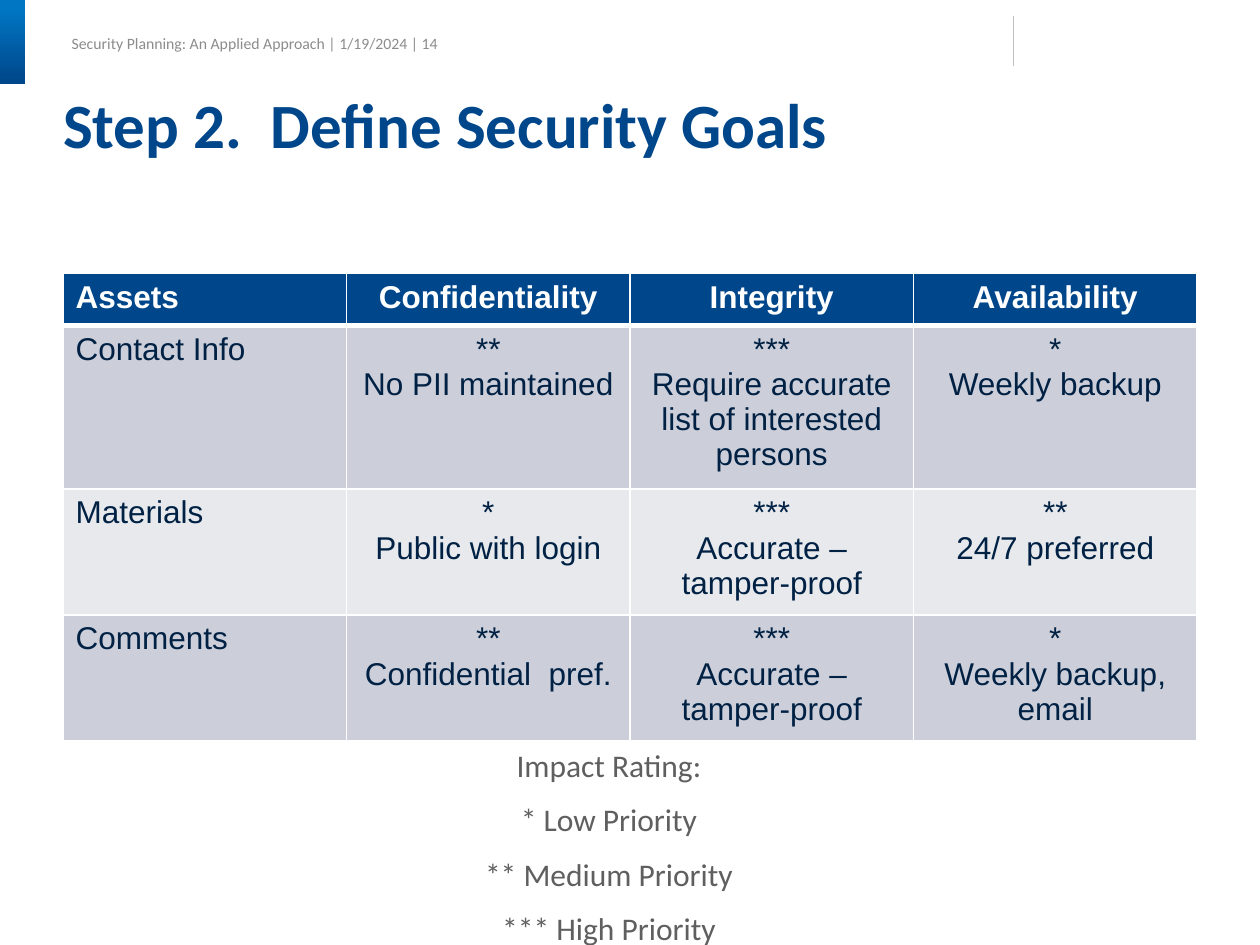
"""Build the security goals slide with its asset table and impact rating key."""
from dataclasses import dataclass

from lxml import etree
from pptx import Presentation
from pptx.dml.color import RGBColor
from pptx.enum.shapes import MSO_CONNECTOR, MSO_SHAPE
from pptx.enum.text import MSO_ANCHOR, MSO_AUTO_SIZE, PP_ALIGN
from pptx.oxml.ns import qn
from pptx.util import Pt

LEFT, CENTER = PP_ALIGN.LEFT, PP_ALIGN.CENTER
TOP, MIDDLE = MSO_ANCHOR.TOP, MSO_ANCHOR.MIDDLE
NO_AUTOFIT = MSO_AUTO_SIZE.NONE
RECTANGLE, STRAIGHT = MSO_SHAPE.RECTANGLE, MSO_CONNECTOR.STRAIGHT
NAVY, SKY, WHITE, INK = "00468A", "0176C3", "FFFFFF", "002143"
BANDS = ("CCCFDA", "E7E9ED")
COLUMN_WIDTH = 162


@dataclass(frozen=True)
class Style:
    size: float
    color: str
    font: str = "Calibri"
    bold: bool = False
    align: PP_ALIGN = LEFT
    line_spacing: object = None
    space_before: float = 0


@dataclass(frozen=True)
class Row:
    height: float
    fill: str
    color: str
    cells: tuple
    bold: bool = False
    top_border: float = 1
    bottom_border: float = 1


ROWS = (
    Row(29.5, NAVY, WHITE,
        (("Assets",), ("Confidentiality",), ("Integrity",), ("Availability",)),
        bold=True, bottom_border=3),
    Row(93.6, BANDS[0], INK,
        (("Contact Info",), ("**", "No PII maintained"),
         ("***", "Require accurate list of interested persons"),
         ("*", "Weekly backup")), top_border=3),
    Row(72, BANDS[1], INK,
        (("Materials",), ("*", "Public with login"),
         ("***", "Accurate –", "tamper-proof"), ("**", "24/7 preferred"))),
    Row(72, BANDS[0], INK,
        (("Comments",), ("**", "Confidential  pref."),
         ("***", "Accurate – tamper-proof"), ("*", "Weekly backup, email"))),
)
RATINGS = ("Impact Rating:", "* Low Priority", "** Medium Priority", "*** High Priority")


def rgb(value: str) -> RGBColor:
    """Turn a hex string into a colour."""
    return RGBColor.from_string(value)


def write(frame, lines: tuple, style: Style) -> None:
    """Write one styled paragraph per line."""
    for index, line in enumerate(lines):
        para = frame.add_paragraph() if index else frame.paragraphs[0]
        para.alignment = style.align
        if style.line_spacing:
            para.line_spacing = style.line_spacing
        if index and style.space_before:
            para.space_before = Pt(style.space_before)
        span = para.add_run()
        span.text = line
        span.font.name = style.font
        span.font.size = Pt(style.size)
        span.font.bold = style.bold
        span.font.color.rgb = rgb(style.color)


def set_frame(box, bounds: tuple, anchor: MSO_ANCHOR, wrap: bool = True):
    """Place a box, clear its insets and return its text frame."""
    box.left, box.top, box.width, box.height = map(Pt, bounds)
    frame = box.text_frame
    frame.margin_left = frame.margin_top = frame.margin_right = frame.margin_bottom = 0
    frame.auto_size = NO_AUTOFIT
    frame.vertical_anchor = anchor
    frame.word_wrap = wrap
    return frame


def add_text(page, bounds: tuple, lines: tuple, style: Style,
             anchor: MSO_ANCHOR = TOP, wrap: bool = True) -> None:
    """Add a text box."""
    box = page.shapes.add_textbox(*map(Pt, bounds))
    write(set_frame(box, bounds, anchor, wrap), lines, style)


def add_header(page) -> None:
    """Draw the running head, corner bar and thin divider."""
    add_text(page, (41, 16.5, 210, 16.5),
             ("Security Planning: An Applied Approach | 1/19/2024 | 14",),
             Style(9, "8C8C8C"), MIDDLE, False)
    bar = page.shapes.add_shape(RECTANGLE, 0, 0, Pt(14.4), Pt(48))
    bar.shadow.inherit = False
    bar.line.fill.background()
    bar.fill.gradient()
    bar.fill.gradient_angle = 270
    for stop, color, position in zip(bar.fill.gradient_stops, (SKY, NAVY), (0.1, 1)):
        stop.color.rgb = rgb(color)
        stop.position = position
    divider = page.shapes.add_connector(STRAIGHT, Pt(579), Pt(9.4), Pt(579), Pt(37.5))
    divider.line.color.rgb = rgb("BFBFBF")
    divider.line.width = Pt(0.75)
    etree.SubElement(divider._element.spPr, qn("a:effectLst"))


def add_border(cell, side: str, width: float) -> None:
    """Give one side of a cell a white border."""
    border = etree.SubElement(cell._tc.get_or_add_tcPr(), qn(f"a:ln{side}"), w=str(Pt(width)))
    fill = etree.SubElement(border, qn("a:solidFill"))
    etree.SubElement(fill, qn("a:srgbClr"), val=WHITE)


def add_goals_table(page, left: float, top: float, rows: tuple) -> None:
    """Add the table of assets and their security goals."""
    columns = len(rows[0].cells)
    height = sum(row.height for row in rows)
    table = page.shapes.add_table(len(rows), columns, Pt(left), Pt(top),
                                  Pt(columns * COLUMN_WIDTH), Pt(height)).table
    for column in table.columns:
        column.width = Pt(COLUMN_WIDTH)
    for row_index, row in enumerate(rows):
        table.rows[row_index].height = Pt(row.height)
        borders = {"L": 1, "R": 1, "T": row.top_border, "B": row.bottom_border}
        for column_index, lines in enumerate(row.cells):
            cell = table.cell(row_index, column_index)
            for side, width in borders.items():
                add_border(cell, side, width)
            cell.fill.solid()
            cell.fill.fore_color.rgb = rgb(row.fill)
            align = CENTER if column_index else LEFT
            write(cell.text_frame, lines, Style(18, row.color, "Arial", row.bold, align))


def main() -> None:
    """Build and save the deck."""
    deck = Presentation()
    deck.slide_width, deck.slide_height = Pt(720), Pt(540)
    page = deck.slides.add_slide(deck.slide_layouts[5])
    add_header(page)
    title = set_frame(page.shapes.title, (36, 54, 648, 90), TOP)
    write(title, ("Step 2.  Define Security Goals",),
          Style(36, NAVY, bold=True, line_spacing=0.9))
    add_goals_table(page, 36, 156.4, ROWS)
    add_text(page, (24, 426, 648, 99.5), RATINGS,
             Style(18, "5F5F5F", align=CENTER, line_spacing=Pt(22), space_before=9))
    deck.save("out.pptx")


if __name__ == "__main__":
    main()
